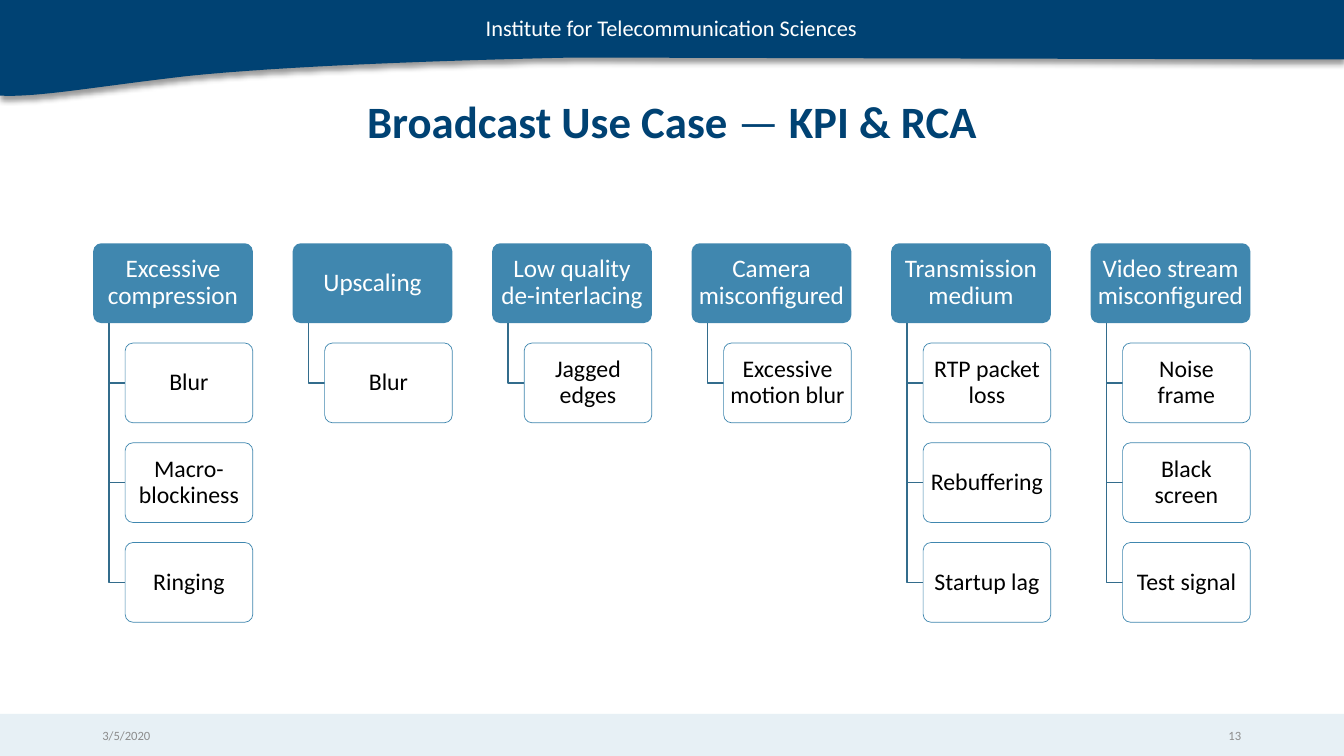
from dataclasses import dataclass

from lxml import etree
from pptx import Presentation
from pptx.dml.color import RGBColor
from pptx.enum.shapes import MSO_SHAPE
from pptx.enum.text import MSO_ANCHOR, PP_ALIGN
from pptx.oxml.ns import qn
from pptx.util import Cm, Pt

RECTANGLE, ROUNDED = MSO_SHAPE.RECTANGLE, MSO_SHAPE.ROUNDED_RECTANGLE
TOP, MIDDLE = MSO_ANCHOR.TOP, MSO_ANCHOR.MIDDLE
LEFT, CENTER, RIGHT = PP_ALIGN.LEFT, PP_ALIGN.CENTER, PP_ALIGN.RIGHT


@dataclass(frozen=True)
class Theme:
    """Colours, font and type sizes of the slide."""
    font: str = "Calibri"
    navy: str = "004273"
    blue: str = "4087AF"
    branch: str = "336C8C"
    pale: str = "E7F0F5"
    gray: str = "8C8C8C"
    white: str = "FFFFFF"
    black: str = "000000"
    title_size: int = 32
    cause_size: int = 18
    symptom_size: int = 17
    banner_size: int = 16
    footer_size: int = 9


@dataclass(frozen=True)
class Box:
    """A region in centimetres."""
    left: float
    top: float
    width: float
    height: float

    def lengths(self):
        """Return the four lengths for a shape call."""
        return Cm(self.left), Cm(self.top), Cm(self.width), Cm(self.height)


THEME = Theme()
SLIDE = Box(0, 0, 33.87, 19.05)
FAULTS = {
    "Excessive compression": ["Blur", "Macro-blockiness", "Ringing"],
    "Upscaling": ["Blur"],
    "Low quality de-interlacing": ["Jagged edges"],
    "Camera misconfigured": ["Excessive motion blur"],
    "Transmission medium": ["RTP packet loss", "Rebuffering", "Startup lag"],
    "Video stream misconfigured": ["Noise frame", "Black screen", "Test signal"],
}


def write(frame, *runs, size, color, align=LEFT, anchor=MIDDLE, spacing=1.0,
          inset=0.25, inset_y=0.13, wrap=True):
    """Fill a text frame with one paragraph of (text, bold) runs."""
    frame.word_wrap = wrap
    frame.vertical_anchor = anchor
    frame.margin_left = frame.margin_right = Cm(inset)
    frame.margin_top = frame.margin_bottom = Cm(inset_y)
    paragraph = frame.paragraphs[0]
    paragraph.alignment = align
    paragraph.line_spacing = spacing
    for text, bold in runs:
        run = paragraph.add_run()
        run.text = text
        run.font.name = THEME.font
        run.font.size = Pt(size)
        run.font.bold = bold
        run.font.color.rgb = RGBColor.from_string(color)


def paint(shape, fill=None, line=None, weight=1.0):
    """Set fill and outline of a shape and drop its shadow."""
    shape.shadow.inherit = False
    if fill:
        shape.fill.solid()
        shape.fill.fore_color.rgb = RGBColor.from_string(fill)
    else:
        shape.fill.background()
    if line:
        shape.line.color.rgb = RGBColor.from_string(line)
        shape.line.width = Pt(weight)
    else:
        shape.line.fill.background()
    return shape


def set_alpha(color_element, percent):
    """Make a colour element partly transparent."""
    etree.SubElement(color_element, qn("a:alpha"), val=str(percent * 1000))


def outline(shapes, points, close):
    """Build a freeform through points given in centimetres."""
    start, *rest = [(Cm(x), Cm(y)) for x, y in points]
    builder = shapes.build_freeform(*start)
    builder.add_line_segments(rest, close=close)
    return builder.convert_to_shape()


def bezier(p0, p1, p2, p3, steps=16):
    """Return points along a cubic curve, without its start."""
    points = []
    for step in range(1, steps + 1):
        t = step / steps
        weights = (1 - t) ** 3, 3 * t * (1 - t) ** 2, 3 * t * t * (1 - t), t ** 3
        points.append(tuple(sum(w * p[axis] for w, p in zip(weights, (p0, p1, p2, p3)))
                            for axis in (0, 1)))
    return points


def banner(slide, box):
    """Draw the wavy top banner with the institute name."""
    crest, middle, end = (0.427, 0.61), (0.139, 0.8), (0, 1)
    wave = [(0, 0.02), (1, 0), (1, 0.63), crest]
    wave += bezier(crest, (0.325, 0.64), (0.209, 0.7), middle)
    wave += bezier(middle, (0.07, 0.91), (0.028, 1.02), end)
    points = [(box.left + x * box.width, box.top + y * box.height) for x, y in wave]
    ribbon = paint(outline(slide.shapes, points, close=True), fill=THEME.navy)
    effects = ribbon._element.spPr.find(qn("a:effectLst"))
    shadow = etree.SubElement(effects, qn("a:outerShdw"), blurRad=str(Pt(4)),
                              dist=str(Pt(3)), dir="5400000", algn="t", rotWithShape="0")
    set_alpha(etree.SubElement(shadow, qn("a:srgbClr"), val=THEME.black), 40)
    name_box = Box(box.left + 11.93, box.top + 0.28, 9.98, 0.94)
    write(slide.shapes.add_textbox(*name_box.lengths()).text_frame,
          ("Institute for Telecommunication Sciences", False), size=THEME.banner_size,
          color=THEME.white, align=CENTER, anchor=TOP, wrap=False)


def heading(slide, box):
    """Write the slide title."""
    write(slide.shapes.add_textbox(*box.lengths()).text_frame,
          ("Broadcast Use Case ", True), ("—", False), (" KPI & RCA", True),
          size=THEME.title_size, color=THEME.navy, align=CENTER, spacing=0.9)


def node(shapes, box, label, size, color, **look):
    """Draw one labelled rounded node."""
    shape = paint(shapes.add_shape(ROUNDED, *box.lengths()), **look)
    shape.adjustments[0] = 0.1
    write(shape.text_frame, (label, False), size=size, color=color, align=CENTER,
          spacing=0.9, inset=0.08, inset_y=0.06)
    return shape


def fault_column(slide, box, cause, symptoms):
    """Draw a cause with its symptoms; the box is that of the cause."""
    shapes = slide.shapes.add_group_shape().shapes
    node(shapes, box, cause, THEME.cause_size, THEME.white, fill=THEME.blue)
    trunk = box.left + 0.1 * box.width
    indent = box.left + 0.2 * box.width
    for row, symptom in enumerate(symptoms, 1):
        top = box.top + 1.25 * row * box.height
        middle = top + box.height / 2
        elbow = [(trunk, box.top + box.height), (trunk, middle), (indent, middle)]
        paint(outline(shapes, elbow, close=False), line=THEME.branch)
        shape = node(shapes, Box(indent, top, 0.8 * box.width, box.height), symptom,
                     THEME.symptom_size, THEME.black, fill=THEME.white,
                     line=THEME.blue, weight=0.5)
        set_alpha(shape._element.spPr.find(qn("a:solidFill"))[0], 90)


def fault_tree(slide, box):
    """Spread the fault columns evenly over the box."""
    width = box.width / (1.25 * len(FAULTS) - 0.25)
    height = box.height / 4.75
    for column, (cause, symptoms) in enumerate(FAULTS.items()):
        left = box.left + 1.25 * column * width
        fault_column(slide, Box(left, box.top, width, height), cause, symptoms)


def footer(slide, box):
    """Draw the footer band with date and slide number."""
    paint(slide.shapes.add_shape(RECTANGLE, *box.lengths()), fill=THEME.pale)
    for left, text, align in ((2.33, "3/5/2020", LEFT), (23.91, "13", RIGHT)):
        part = Box(box.left + left, box.top + 0.05, 7.62, 1.01)
        write(slide.shapes.add_textbox(*part.lengths()).text_frame, (text, False),
              size=THEME.footer_size, color=THEME.gray, align=align)


def main():
    """Build and save the slide."""
    deck = Presentation()
    deck.slide_width, deck.slide_height = Cm(SLIDE.width), Cm(SLIDE.height)
    slide = deck.slides.add_slide(deck.slide_layouts[6])
    footer(slide, Box(0, 17.99, SLIDE.width, 1.06))
    banner(slide, Box(0, -0.05, SLIDE.width, 2.46))
    heading(slide, Box(2.33, 1.78, 29.21, 2.67))
    fault_tree(slide, Box(2.35, 6.13, 29.16, 9.55))
    deck.save("out.pptx")


if __name__ == "__main__":
    main()
